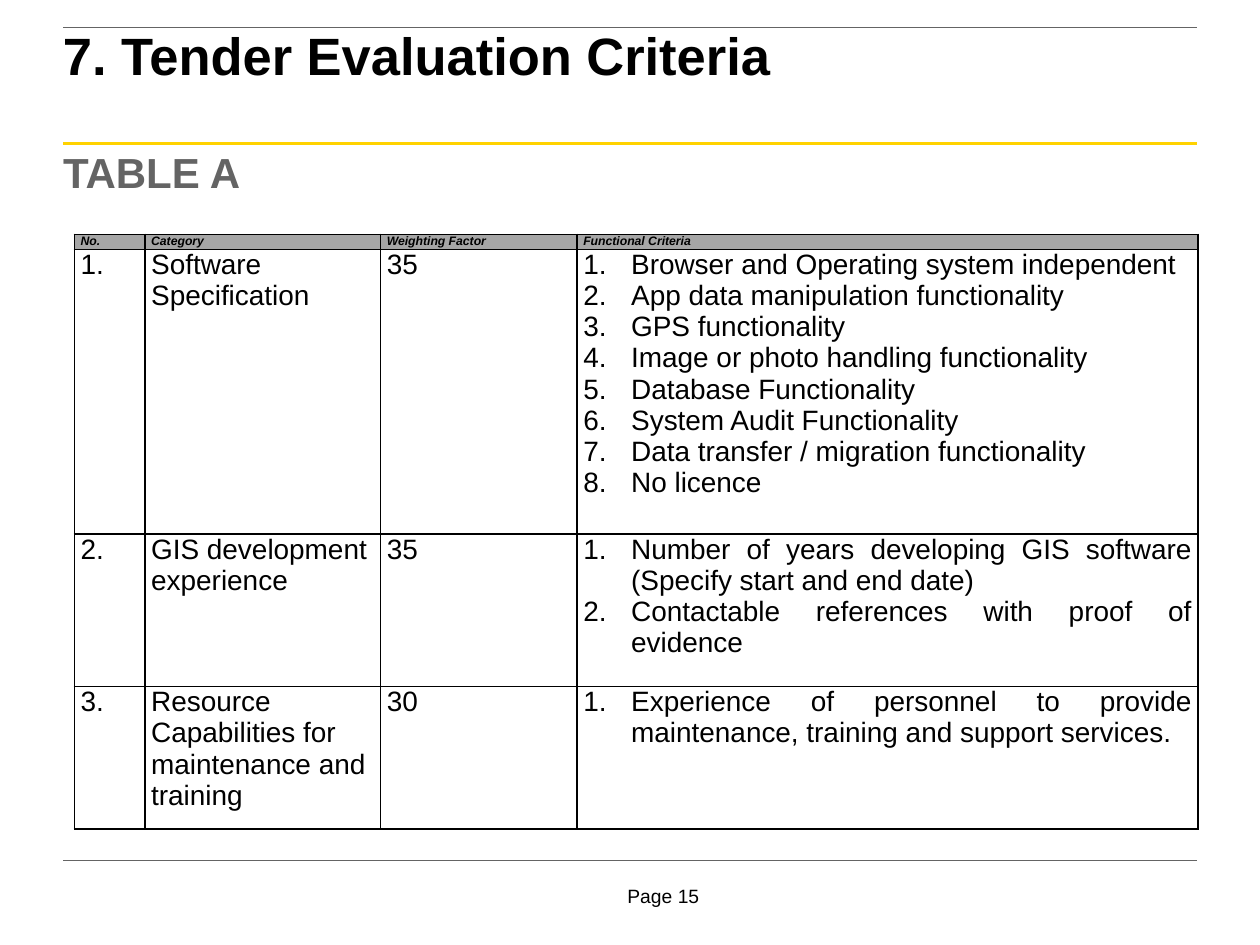
from dataclasses import dataclass

from lxml import etree
from pptx import Presentation
from pptx.dml.color import RGBColor
from pptx.enum.shapes import MSO_CONNECTOR
from pptx.enum.text import PP_ALIGN
from pptx.oxml.ns import qn
from pptx.util import Inches, Pt

STRAIGHT = MSO_CONNECTOR.STRAIGHT
JUSTIFY = PP_ALIGN.JUSTIFY


@dataclass(frozen=True)
class Theme:
    font: str = "Arial"
    black: str = "000000"
    gray: str = "646464"
    yellow: str = "FFD200"
    header_fill: str = "A6A6A6"
    title_size: float = 30
    subtitle_size: float = 24
    header_size: float = 7
    body_size: float = 16
    footer_size: float = 11
    border_width: float = 1


THEME = Theme()

COLUMN_WIDTHS = (0.56, 1.87, 1.56, 4.93)
ROW_HEIGHTS = (0.12, 2.26, 1.21, 1.13)
HEADERS = ("No.", "Category", "Weighting Factor", "Functional Criteria")
CATEGORIES = (
    ("Software Specification", 35, (
        "Browser and Operating system independent",
        "App data manipulation functionality",
        "GPS functionality",
        "Image or photo handling functionality",
        "Database Functionality",
        "System Audit Functionality",
        "Data transfer / migration functionality",
        "No licence",
    )),
    ("GIS development experience", 35, (
        "Number of years developing GIS software (Specify start and end date)",
        "Contactable references with proof of evidence",
    )),
    ("Resource Capabilities for maintenance and training", 30, (
        "Experience of personnel to provide maintenance, training and support services.",
    )),
)


def format_text(text_frame, size, color=THEME.black, bold=False, italic=False):
    for paragraph in text_frame.paragraphs:
        for run in paragraph.runs:
            font = run.font
            font.name = THEME.font
            font.size = Pt(size)
            font.bold = bold
            font.italic = italic
            font.color.rgb = RGBColor.from_string(color)


def add_rule(slide, y, color, width):
    """Draw a horizontal line from margin to margin."""
    rule = slide.shapes.add_connector(STRAIGHT, Inches(0.5), Inches(y), Inches(9.5), Inches(y))
    rule.line.color.rgb = RGBColor.from_string(color)
    rule.line.width = Pt(width)
    etree.SubElement(rule._element.spPr, qn("a:effectLst"))


def add_text(slide, text, left, top, width, height, size, color=THEME.black,
             bold=False, top_inset=0):
    text_box = slide.shapes.add_textbox(Inches(left), Inches(top), Inches(width), Inches(height))
    text_frame = text_box.text_frame
    text_frame.word_wrap = True
    text_frame.margin_left = text_frame.margin_right = text_frame.margin_bottom = 0
    text_frame.margin_top = Inches(top_inset)
    text_frame.text = text
    format_text(text_frame, size, color, bold)
    return text_frame.paragraphs[0]


def set_hanging_indent(paragraph, indent):
    properties = paragraph._p.get_or_add_pPr()
    properties.set("marL", str(Inches(indent)))
    properties.set("indent", str(-Inches(indent)))
    return properties


def number_paragraphs(text_frame):
    for paragraph in text_frame.paragraphs:
        paragraph.alignment = JUSTIFY
        properties = set_hanging_indent(paragraph, 0.38)
        etree.SubElement(properties, qn("a:buFont"), typeface="+mj-lt")
        etree.SubElement(properties, qn("a:buAutoNum"), type="arabicPeriod")


def add_borders(cell):
    properties = cell._tc.get_or_add_tcPr()
    for side in ("lnL", "lnR", "lnT", "lnB"):
        border = etree.SubElement(properties, qn(f"a:{side}"), w=str(Pt(THEME.border_width)))
        fill = etree.SubElement(border, qn("a:solidFill"))
        etree.SubElement(fill, qn("a:srgbClr"), val=THEME.black)


def fill_cell(cell, text, is_header):
    cell.margin_left = cell.margin_right = Inches(0.05)
    cell.margin_top = cell.margin_bottom = 0
    add_borders(cell)
    cell.text_frame.text = text
    if is_header:
        cell.fill.solid()
        cell.fill.fore_color.rgb = RGBColor.from_string(THEME.header_fill)
        format_text(cell.text_frame, THEME.header_size, bold=True, italic=True)
    else:
        cell.fill.background()
        format_text(cell.text_frame, THEME.body_size)


def add_criteria_table(slide):
    rows = [HEADERS] + [
        (f"{number}.", category, str(weight), "\n".join(criteria))
        for number, (category, weight, criteria) in enumerate(CATEGORIES, start=1)
    ]
    table = slide.shapes.add_table(
        len(rows), len(HEADERS), Inches(0.59), Inches(1.86),
        Inches(sum(COLUMN_WIDTHS)), Inches(sum(ROW_HEIGHTS)),
    ).table
    table.first_row = table.horz_banding = False
    for column, width in zip(table.columns, COLUMN_WIDTHS):
        column.width = Inches(width)
    for row_index, (texts, height) in enumerate(zip(rows, ROW_HEIGHTS)):
        table.rows[row_index].height = Inches(height)
        for column_index, text in enumerate(texts):
            fill_cell(table.cell(row_index, column_index), text, row_index == 0)
        if row_index > 0:
            number_paragraphs(table.cell(row_index, len(HEADERS) - 1).text_frame)


def main():
    presentation = Presentation()
    presentation.slide_width = Inches(10)
    presentation.slide_height = Inches(7.5)
    slide = presentation.slides.add_slide(presentation.slide_layouts[6])

    add_text(slide, "Page 15", 4.98, 7.02, 0.73, 0.22, THEME.footer_size)
    add_rule(slide, 1.14, THEME.yellow, 1.5)
    add_rule(slide, 6.83, THEME.gray, 0.25)
    add_rule(slide, 0.22, THEME.gray, 0.5)
    title = add_text(slide, "7. Tender Evaluation Criteria", 0.5, 0.22, 9.17, 0.94,
                     THEME.title_size, bold=True, top_inset=0.04)
    title.alignment = JUSTIFY
    title.line_spacing = 0.85
    set_hanging_indent(title, 0.39)
    add_text(slide, "TABLE A", 0.5, 1.16, 9.18, 5.66, THEME.subtitle_size, THEME.gray, bold=True)
    add_criteria_table(slide)

    presentation.save("out.pptx")


if __name__ == "__main__":
    main()
